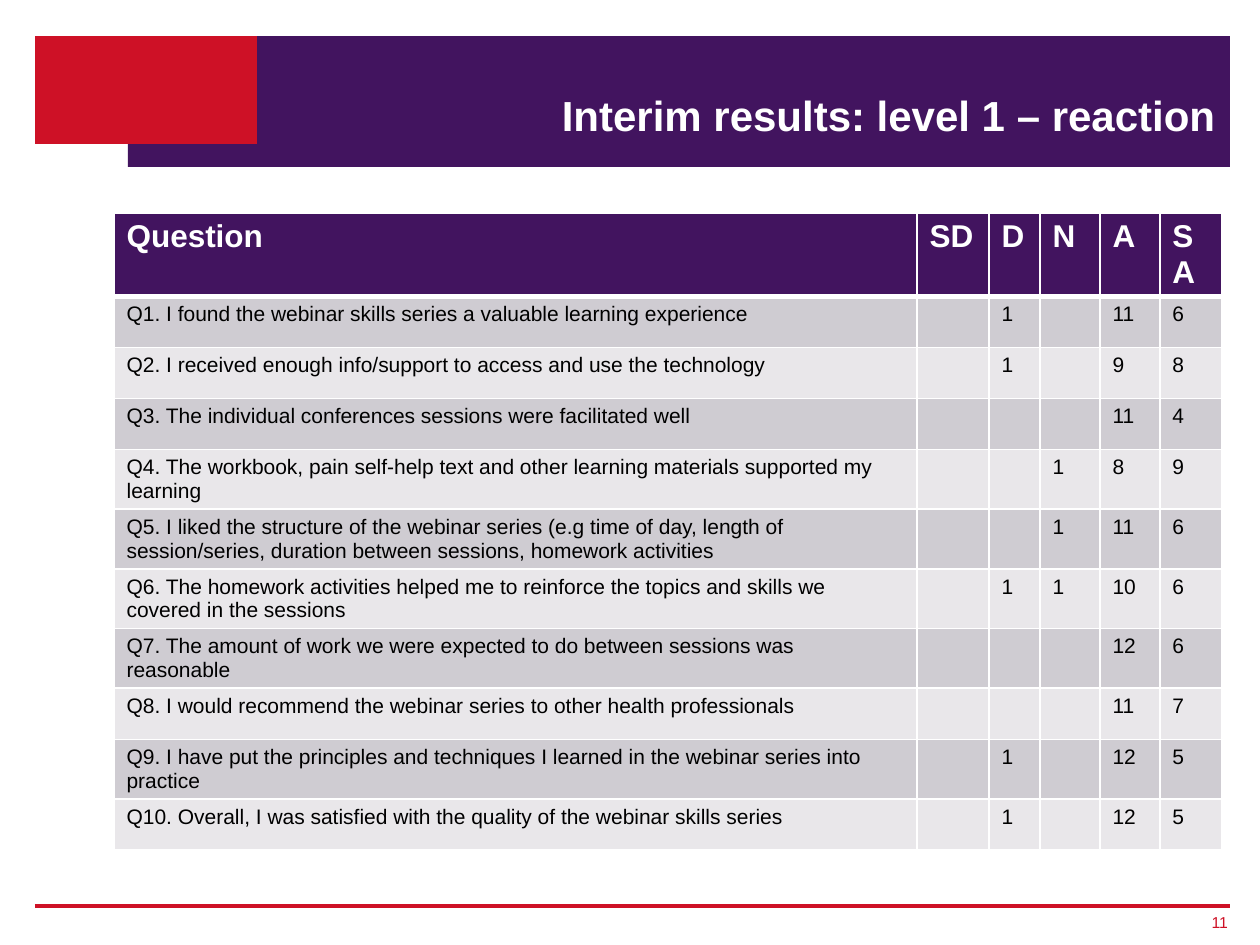
from lxml.etree import SubElement
from pptx import Presentation
from pptx.dml.color import RGBColor
from pptx.enum.shapes import MSO_CONNECTOR, MSO_SHAPE
from pptx.enum.text import MSO_ANCHOR as Anchor, MSO_AUTO_SIZE as AutoSize, PP_ALIGN as Align
from pptx.oxml.ns import qn
from pptx.util import Emu, Pt

PX = 914400 / 126
FONT = "Arial"
PURPLE = RGBColor(0x42, 0x14, 0x5F)
RED = RGBColor(0xCE, 0x11, 0x26)
WHITE = RGBColor(0xFF, 0xFF, 0xFF)
BLACK = RGBColor(0x00, 0x00, 0x00)
BANDS = [RGBColor(0xCF, 0xCC, 0xD2), RGBColor(0xE9, 0xE7, 0xEA)]

COLUMN_WIDTHS = [803, 72, 51, 60, 60, 62]
ROW_HEIGHT = 51
HEADER = ["Question", "SD", "D", "N", "A", "SA"]
RESULTS = [
    ["Q1. I found the webinar skills series a valuable learning experience",
     "", "1", "", "11", "6"],
    ["Q2. I received enough info/support to access and use the technology",
     "", "1", "", "9", "8"],
    ["Q3. The individual conferences sessions were facilitated well",
     "", "", "", "11", "4"],
    ["Q4. The workbook, pain self-help text and other learning materials supported my learning",
     "", "", "1", "8", "9"],
    ["Q5. I liked the structure of the webinar series (e.g time of day, length of "
     "session/series, duration between sessions, homework activities",
     "", "", "1", "11", "6"],
    ["Q6. The homework activities helped me to reinforce the topics and skills we "
     "covered in the sessions",
     "", "1", "1", "10", "6"],
    ["Q7. The amount of work we were expected to do between sessions was reasonable",
     "", "", "", "12", "6"],
    ["Q8. I would recommend the webinar series to other health professionals",
     "", "", "", "11", "7"],
    ["Q9. I have put the principles and techniques I learned in the webinar series into practice",
     "", "1", "", "12", "5"],
    ["Q10. Overall, I was satisfied with the quality of the webinar skills series",
     "", "1", "", "12", "5"],
]


def px(*lengths):
    return [Emu(round(length * PX)) for length in lengths]


def set_font(paragraph, size, color, bold=False):
    font = paragraph.font
    font.name, font.size, font.bold = FONT, Pt(size), bold
    font.color.rgb = color


def add_block(slide, color, *box):
    block = slide.shapes.add_shape(MSO_SHAPE.RECTANGLE, *px(*box))
    block.shadow.inherit = False
    block.fill.solid()
    block.fill.fore_color.rgb = color
    block.line.fill.background()


def add_rule(slide, *ends):
    rule = slide.shapes.add_connector(MSO_CONNECTOR.STRAIGHT, *px(*ends))
    rule.line.color.rgb = RED
    rule.line.width = Pt(2.25)
    SubElement(rule.element.spPr, qn("a:effectLst"))
    return rule


def place_title(slide, text, behind, *box):
    """Fill the title placeholder and stack it just above the shape behind it."""
    title = slide.shapes.title
    title.left, title.top, title.width, title.height = px(*box)
    behind.element.addnext(title.element)
    frame = title.text_frame
    frame.text = text
    frame.auto_size = AutoSize.NONE
    frame.vertical_anchor = Anchor.BOTTOM
    paragraph = frame.paragraphs[0]
    paragraph.alignment = Align.RIGHT
    paragraph.line_spacing = Pt(25)
    set_font(paragraph, 24, WHITE, bold=True)


def add_borders(cell, top, bottom):
    """Draw white borders; top and bottom are widths in points."""
    properties = cell._tc.get_or_add_tcPr()
    for side, width in (("L", 1), ("R", 1), ("T", top), ("B", bottom)):
        line = SubElement(properties, qn(f"a:ln{side}"), w=str(Pt(width)))
        fill = SubElement(line, qn("a:solidFill"))
        SubElement(fill, qn("a:srgbClr"), val=str(WHITE))


def fill_row(row, texts, fill, size, color, bold=False, top=1, bottom=1):
    row.height = px(ROW_HEIGHT)[0]
    for cell, text in zip(row.cells, texts):
        add_borders(cell, top, bottom)
        cell.fill.solid()
        cell.fill.fore_color.rgb = fill
        if text:
            cell.text = text
            set_font(cell.text_frame.paragraphs[0], size, color, bold)


def add_results_table(slide, left, top):
    row_count = len(RESULTS) + 1
    box = px(left, top, sum(COLUMN_WIDTHS), ROW_HEIGHT * row_count)
    table = slide.shapes.add_table(row_count, len(HEADER), *box).table
    for column, width in zip(table.columns, px(*COLUMN_WIDTHS)):
        column.width = width
    fill_row(table.rows[0], HEADER, PURPLE, 18, WHITE, bold=True, bottom=3)
    for index, result in enumerate(RESULTS):
        fill_row(table.rows[index + 1], result, BANDS[index % 2], 12, BLACK,
                 top=1 if index else 3)


def add_page_number(slide, text, *box):
    frame = slide.shapes.add_textbox(*px(*box)).text_frame
    frame.word_wrap = True
    frame.margin_left = frame.margin_right = frame.margin_top = frame.margin_bottom = 0
    frame.vertical_anchor = Anchor.MIDDLE
    frame.text = text
    paragraph = frame.paragraphs[0]
    paragraph.alignment = Align.RIGHT
    set_font(paragraph, 9, RED)


def main():
    presentation = Presentation()
    presentation.slide_width, presentation.slide_height = px(1260, 945)
    slide = presentation.slides.add_slide(presentation.slide_layouts.get_by_name("Title Only"))
    add_block(slide, PURPLE, 128, 36, 1102, 131)
    add_block(slide, RED, 35, 36, 222, 108)
    rule = add_rule(slide, 35, 906, 1230, 906)
    place_title(slide, "Interim results: level 1 – reaction", rule, 258, 59, 970, 87)
    add_results_table(slide, 114, 213)
    add_page_number(slide, "11", 1194, 908, 34, 29)
    presentation.save("out.pptx")


if __name__ == "__main__":
    main()
